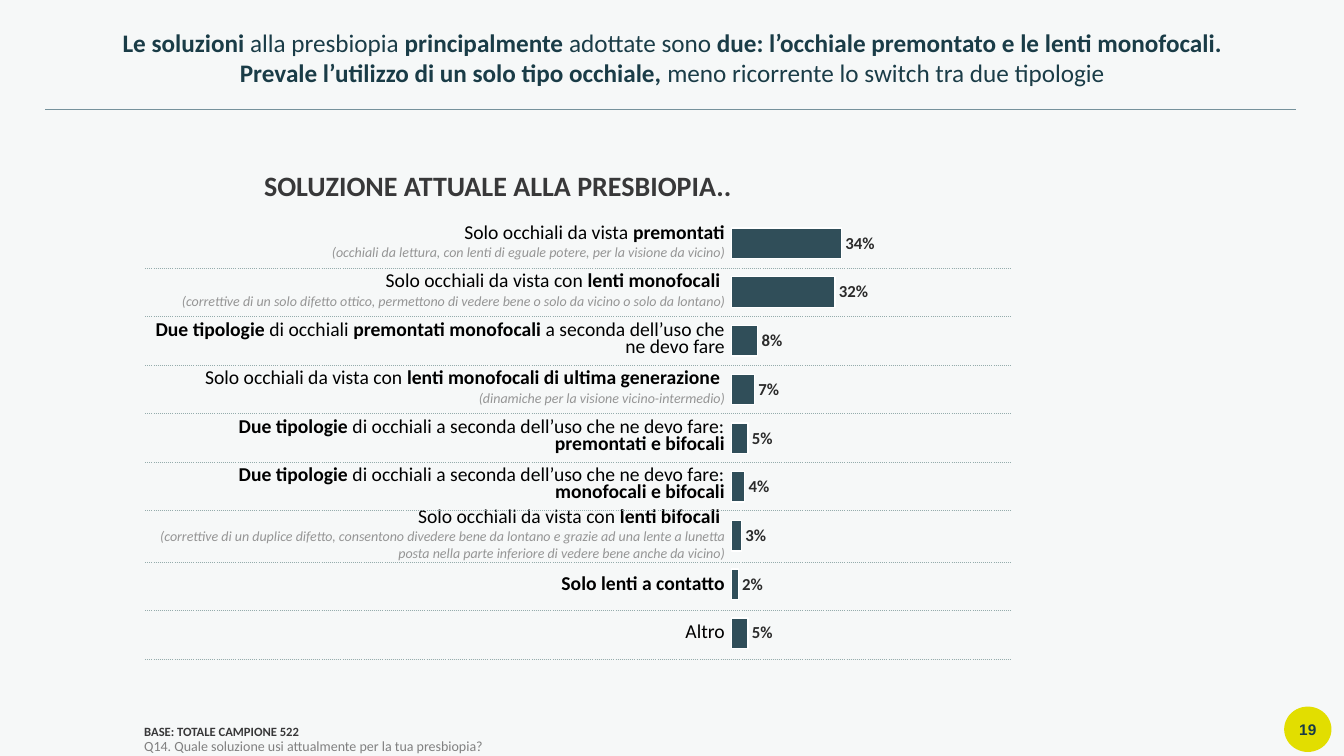
"""Build the slide on the current solutions to presbyopia."""
import pptx
import pptx.chart.data
import pptx.dml.color
import pptx.enum.chart
import pptx.enum.shapes
import pptx.enum.text
import pptx.oxml
import pptx.oxml.ns
import pptx.util

Pt = pptx.util.Pt
RGBColor = pptx.dml.color.RGBColor
Align = pptx.enum.text.PP_ALIGN
Anchor = pptx.enum.text.MSO_ANCHOR

BACKGROUND = RGBColor(0xF6, 0xF8, 0xF8)
LIME = RGBColor(0xE2, 0xDE, 0x00)
NAVY = RGBColor(0x19, 0x3B, 0x47)
TITLE_COLOR = RGBColor(0x1A, 0x3C, 0x47)
RULE_COLOR = RGBColor(0x76, 0x92, 0x9C)
DOTTED_COLOR = RGBColor(0x95, 0xAC, 0xAC)
CHARCOAL = RGBColor(0x38, 0x38, 0x39)
GRAY = RGBColor(0x80, 0x80, 0x80)
NOTE_GRAY = RGBColor(0x95, 0x95, 0x95)
LABEL_COLOR = RGBColor(0x2B, 0x2B, 0x2B)
BAR_COLOR = RGBColor(0x30, 0x4E, 0x59)
BLACK = RGBColor(0, 0, 0)
WHITE = RGBColor(0xFF, 0xFF, 0xFF)

TITLE_LINES = [
    "*Le soluzioni *alla presbiopia *principalmente *adottate sono "
    "*due: l’occhiale premontato e le lenti monofocali.*",
    "*Prevale l’utilizzo di un solo tipo occhiale, *meno ricorrente lo switch tra due tipologie",
]
SOLUTIONS = [
    ("Solo occhiali da vista *premontati*",
     "(occhiali da lettura, con lenti di eguale potere, per la visione da vicino)", 0.34),
    ("Solo occhiali da vista con* lenti monofocali *",
     "(correttive di un solo difetto ottico, permettono di vedere bene o solo da vicino "
     "o solo da lontano)", 0.32),
    ("*Due tipologie *di occhiali* premontati monofocali *a seconda dell’uso che ne devo fare",
     "", 0.08),
    ("Solo occhiali da vista con *lenti monofocali di ultima generazione *",
     "(dinamiche per la visione vicino-intermedio)", 0.07),
    ("*Due tipologie *di occhiali a seconda dell’uso che ne devo fare: *premontati e bifocali*",
     "", 0.05),
    ("*Due tipologie *di occhiali a seconda dell’uso che ne devo fare: *monofocali e bifocali*",
     "", 0.04),
    ("Solo occhiali da vista con *lenti bifocali *",
     "(correttive di un duplice difetto, consentono divedere bene da lontano e grazie ad una "
     "lente a lunetta posta nella parte inferiore di vedere bene anche da vicino)", 0.03),
    ("*Solo lenti a contatto*", "", 0.02),
    ("Altro", "", 0.05),
]


def add_runs(paragraph, marked_text, size, color, italic=False, font="Calibri"):
    """Add runs to a paragraph, with the parts between asterisks in bold."""
    for index, text in enumerate(marked_text.split("*")):
        if text:
            run = paragraph.add_run()
            run.text = text
            run.font.name = font
            run.font.size = Pt(size)
            run.font.bold = index % 2 == 1
            run.font.italic = italic
            run.font.color.rgb = color


def set_margins(frame, left, top, right, bottom):
    """Set the inner margins of a text frame or table cell."""
    frame.margin_left, frame.margin_top = Pt(left), Pt(top)
    frame.margin_right, frame.margin_bottom = Pt(right), Pt(bottom)


def add_text(slide, box, lines, alignment, spacing=None):
    """Add a wrapping text box of (text, size, color) lines and return its frame."""
    frame = slide.shapes.add_textbox(*map(Pt, box)).text_frame
    frame.word_wrap = True
    for index, (text, size, color) in enumerate(lines):
        paragraph = frame.add_paragraph() if index else frame.paragraphs[0]
        paragraph.alignment = alignment
        paragraph.line_spacing = spacing
        add_runs(paragraph, text, size, color)
    return frame


def add_page_number(slide, number):
    """Add the round page number badge."""
    shape = slide.shapes.add_shape(
        pptx.enum.shapes.MSO_SHAPE.OVAL, Pt(917.3), Pt(504.7), Pt(33.8), Pt(32.4))
    shape.shadow.inherit = False
    shape.fill.solid()
    shape.fill.fore_color.rgb = LIME
    shape.line.fill.background()
    frame = shape.text_frame
    set_margins(frame, 0, 0, 0, 0)
    frame.vertical_anchor = Anchor.MIDDLE
    frame.paragraphs[0].alignment = Align.CENTER
    add_runs(frame.paragraphs[0], f"*{number}*", 11, NAVY, font="Arial")


def add_rule(slide):
    """Add the thin line under the title."""
    line = slide.shapes.add_connector(
        pptx.enum.shapes.MSO_CONNECTOR.STRAIGHT, Pt(32.4), Pt(77.8), Pt(925.9), Pt(77.8))
    line.line.color.rgb = RULE_COLOR
    line.line.width = Pt(0.5)
    line.element.spPr.append(pptx.oxml.parse_xml(
        f"<a:effectLst {pptx.oxml.ns.nsdecls('a')}/>"))


def set_borders(cell, dotted_sides):
    """Dot the given sides of a cell and clear the others."""
    properties = cell._tc.get_or_add_tcPr()
    for index, side in enumerate("LRTB"):
        content = "<a:noFill/>"
        if side in dotted_sides:
            content = (f'<a:solidFill><a:srgbClr val="{DOTTED_COLOR}"/></a:solidFill>'
                       '<a:prstDash val="sysDot"/>')
        properties.insert(index, pptx.oxml.parse_xml(
            f'<a:ln{side} {pptx.oxml.ns.nsdecls("a")} w="{Pt(0.5)}">{content}</a:ln{side}>'))


def add_solution_table(slide):
    """Add the table that names each solution."""
    row_height = 34.64
    table = slide.shapes.add_table(
        len(SOLUTIONS), 2, Pt(103.7), Pt(157), Pt(618.5), Pt(row_height * len(SOLUTIONS))).table
    table.first_row = table.horz_banding = False
    table.columns[0].width, table.columns[1].width = Pt(414.7), Pt(203.8)
    for index, (name, note, _) in enumerate(SOLUTIONS):
        table.rows[index].height = Pt(row_height)
        for column in range(2):
            cell = table.cell(index, column)
            cell.fill.background()
            set_borders(cell, "TB" if index else "B")
        cell = table.cell(index, 0)
        cell.vertical_anchor = Anchor.MIDDLE
        set_margins(cell, 0.7, 0.7, 0.7, 0)
        frame = cell.text_frame
        add_runs(frame.paragraphs[0], name, 14, BLACK)
        if note:
            add_runs(frame.add_paragraph(), note, 10, NOTE_GRAY, italic=True)
        for paragraph in frame.paragraphs:
            paragraph.alignment = Align.RIGHT
            paragraph.line_spacing = Pt(12)


def set_plot_layout(chart, x, y, width, height):
    """Fix the inner plot area as fractions of the chart."""
    plot_area = chart.element.chart.plotArea
    for layout in plot_area.findall(pptx.oxml.ns.qn("c:layout")):
        plot_area.remove(layout)
    plot_area.insert(0, pptx.oxml.parse_xml(
        f'<c:layout {pptx.oxml.ns.nsdecls("c")}><c:manualLayout><c:layoutTarget val="inner"/>'
        f'<c:xMode val="edge"/><c:yMode val="edge"/><c:x val="{x}"/><c:y val="{y}"/>'
        f'<c:w val="{width}"/><c:h val="{height}"/></c:manualLayout></c:layout>'))


def add_solution_chart(slide):
    """Add the bar chart of the share of each solution."""
    data = pptx.chart.data.CategoryChartData(number_format="0%")
    data.categories = [str(index + 1) for index in range(len(SOLUTIONS))]
    data.add_series("Series 1", [share for _, _, share in SOLUTIONS])
    chart = slide.shapes.add_chart(
        pptx.enum.chart.XL_CHART_TYPE.BAR_CLUSTERED,
        Pt(508.3), Pt(149.8), Pt(288), Pt(329.8), data).chart
    chart.has_legend = chart.has_title = False
    chart.font.name, chart.font.size = "Calibri", Pt(9)
    chart.font.color.rgb = LABEL_COLOR
    chart.category_axis.reverse_order = True
    chart.category_axis.visible = False
    axis = chart.value_axis
    axis.visible = axis.has_major_gridlines = False
    axis.minimum_scale, axis.maximum_scale = 0, 0.9
    plot = chart.plots[0]
    plot.gap_width = 60
    plot.vary_by_categories = False
    bars = plot.series[0]
    bars.format.fill.solid()
    bars.format.fill.fore_color.rgb = BAR_COLOR
    bars.format.line.color.rgb = WHITE
    bars.format.line.width = Pt(1)
    labels = bars.data_labels
    labels.show_value = True
    labels.position = pptx.enum.chart.XL_LABEL_POSITION.OUTSIDE_END
    labels.number_format, labels.number_format_is_linked = "0%", False
    labels.font.name, labels.font.size, labels.font.bold = "Calibri", Pt(12), True
    labels.font.color.rgb = LABEL_COLOR
    set_plot_layout(chart, 0.05, 0.02, 0.72, 0.95)


def main():
    """Build and save the presentation."""
    presentation = pptx.Presentation()
    presentation.slide_width, presentation.slide_height = Pt(960), Pt(540)
    slide = presentation.slides.add_slide(presentation.slide_layouts[6])
    slide.background.fill.solid()
    slide.background.fill.fore_color.rgb = BACKGROUND
    add_page_number(slide, 19)
    add_rule(slide)
    add_solution_table(slide)
    base = add_text(slide, (103, 472.3, 857, 67), [
        ("*BASE: TOTALE CAMPIONE 522*", 9, CHARCOAL),
        ("Q14. Quale soluzione usi attualmente per la tua presbiopia?", 10, GRAY),
    ], Align.LEFT, 0.95)
    set_margins(base, 0, 0, 0, 0)
    base.vertical_anchor = Anchor.BOTTOM
    add_text(slide, (128.9, 116.6, 453.6, 31.7),
             [("*SOLUZIONE ATTUALE ALLA PRESBIOPIA..*", 20, CHARCOAL)], Align.CENTER)
    add_solution_chart(slide)
    add_text(slide, (24.5, 15.8, 911.5, 51.1),
             [(line, 18, TITLE_COLOR) for line in TITLE_LINES], Align.CENTER)
    presentation.save("out.pptx")


if __name__ == "__main__":
    main()
